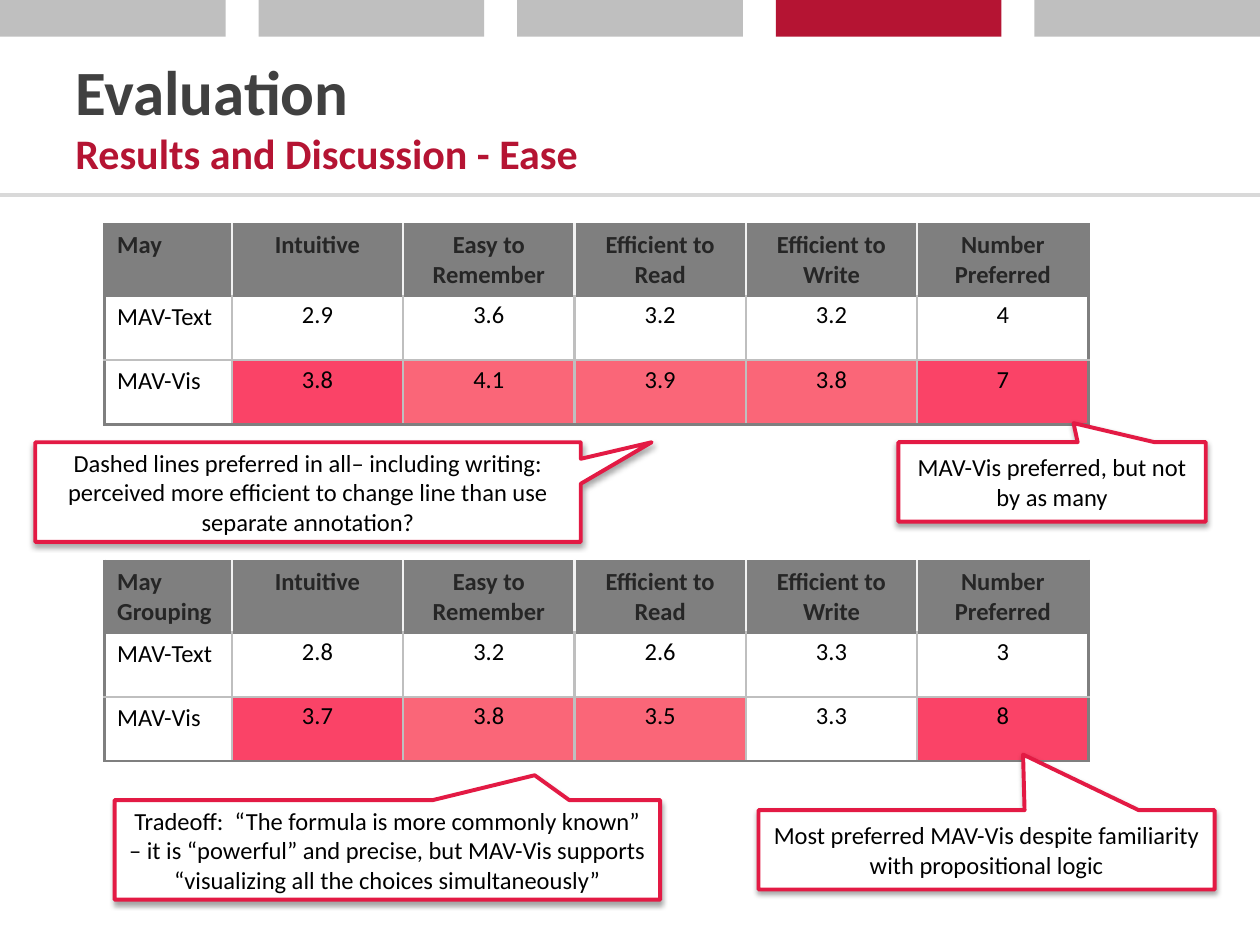
"""Build the evaluation slide with two rating tables and four callouts."""
from dataclasses import dataclass

from lxml.etree import SubElement
from pptx import Presentation
from pptx.dml.color import RGBColor
from pptx.enum.shapes import MSO_CONNECTOR, MSO_SHAPE
from pptx.enum.text import MSO_ANCHOR, PP_ALIGN
from pptx.oxml import parse_xml
from pptx.oxml.ns import nsdecls, qn
from pptx.slide import Slide
from pptx.table import _Cell
from pptx.text.text import _Run
from pptx.util import Inches, Pt

FONT = "Calibri"
BLACK, WHITE = "000000", "FFFFFF"
CRIMSON, CALLOUT_RED = "B51433", "E31A44"
DARK_GRAY, GRAY, SILVER, RULE_GRAY = "404040", "7F7F7F", "BFBFBF", "D9D9D9"
HEADER_TEXT, HEADER_LINE = "262626", "F2F2F2"
STRONG, MILD = "FA4367", "FA6678"
HEADINGS = ["Intuitive", "Easy to Remember", "Efficient to Read",
            "Efficient to Write", "Number Preferred"]
COLUMN_WIDTHS = [1.01] + [1.36] * len(HEADINGS)
ROW_HEIGHTS = [0.57, 0.51, 0.51]


@dataclass
class RatingTable:
    title: str
    top: float
    text_scores: list[str]
    vis_scores: list[str]
    vis_fills: list[str]


@dataclass
class Callout:
    left: float
    top: float
    width: float
    height: float
    pointer: tuple[float, float]
    text: str


TABLES = [
    RatingTable("May Grouping", 4.45, ["2.8", "3.2", "2.6", "3.3", "3"],
                ["3.7", "3.8", "3.5", "3.3", "8"], [STRONG, MILD, MILD, WHITE, STRONG]),
    RatingTable("May", 1.78, ["2.9", "3.6", "3.2", "3.2", "4"],
                ["3.8", "4.1", "3.9", "3.8", "7"], [STRONG, MILD, MILD, MILD, STRONG]),
]
CALLOUTS = [
    Callout(0.28, 3.51, 4.33, 0.79, (0.63, -0.5),
            "Dashed lines preferred in all– including writing: perceived more "
            "efficient to change line than use separate annotation?"),
    Callout(7.13, 3.51, 2.44, 0.63, (0.07, -0.74),
            "MAV-Vis preferred, but not by as many"),
    Callout(0.91, 6.35, 4.33, 0.79, (0.27, -0.75),
            "Tradeoff:  “The formula is more commonly known” – it is “powerful” and "
            "precise, but MAV-Vis supports “visualizing all the choices simultaneously”"),
    Callout(6.02, 6.43, 3.62, 0.63, (0.08, -1.2),
            "Most preferred MAV-Vis despite familiarity with propositional logic"),
]


def color(value: str) -> RGBColor:
    return RGBColor.from_string(value)


def format_run(run: _Run, size: float, value: str, bold: bool = False) -> None:
    run.font.name = FONT
    run.font.size = Pt(size)
    run.font.bold = bold
    run.font.color.rgb = color(value)


def draw_banner(slide: Slide) -> None:
    rule = slide.shapes.add_connector(
        MSO_CONNECTOR.STRAIGHT, Inches(0), Inches(1.55), Inches(10), Inches(1.55))
    rule.line.color.rgb = color(RULE_GRAY)
    rule.line.width = Pt(2.25)
    SubElement(rule._element.spPr, qn("a:effectLst"))
    count, width, active = 5, 1.79, 3
    step = (10 - width) / (count - 1)
    for index in range(count):
        tab = slide.shapes.add_shape(
            MSO_SHAPE.RECTANGLE, Inches(index * step), Inches(0), Inches(width), Inches(0.29))
        tab.shadow.inherit = False
        tab.fill.solid()
        tab.fill.fore_color.rgb = color(CRIMSON if index == active else SILVER)
        tab.line.fill.background()


def draw_title(slide: Slide) -> None:
    box = slide.shapes.add_textbox(Inches(0.5), Inches(0.29), Inches(9), Inches(1.25))
    text_frame = box.text_frame
    text_frame.word_wrap = True
    text_frame.vertical_anchor = MSO_ANCHOR.MIDDLE
    paragraph = text_frame.paragraphs[0]
    paragraph.text = "Evaluation\vResults and Discussion - Ease"
    heading, subheading = paragraph.runs
    format_run(heading, 36, DARK_GRAY, True)
    format_run(subheading, 24, CRIMSON, True)


def set_borders(cell: _Cell, left: str, right: str, top: str, bottom: str) -> None:
    properties = cell._tc.get_or_add_tcPr()
    sides = zip("LRTB", (left, right, top, bottom))
    for index, (side, value) in enumerate(sides):
        properties.insert(index, parse_xml(
            f'<a:ln{side} {nsdecls("a")} w="{Pt(1.5)}"><a:solidFill>'
            f'<a:srgbClr val="{value}"/></a:solidFill></a:ln{side}>'))


def draw_table(slide: Slide, rating: RatingTable) -> None:
    rows = [[rating.title, *HEADINGS], ["MAV-Text", *rating.text_scores],
            ["MAV-Vis", *rating.vis_scores]]
    last_column, last_row = len(HEADINGS), len(rows) - 1
    fills = [[GRAY] * len(COLUMN_WIDTHS), [WHITE] * len(COLUMN_WIDTHS),
             [WHITE, *rating.vis_fills]]
    table = slide.shapes.add_table(
        len(rows), len(COLUMN_WIDTHS), Inches(0.83), Inches(rating.top),
        Inches(sum(COLUMN_WIDTHS)), Inches(sum(ROW_HEIGHTS))).table
    table.horz_banding = False
    for column, width in zip(table.columns, COLUMN_WIDTHS):
        column.width = Inches(width)
    for row, height in zip(table.rows, ROW_HEIGHTS):
        row.height = Inches(height)
    for row_index, texts in enumerate(rows):
        header = row_index == 0
        inner = HEADER_LINE if header else SILVER
        for column_index, text in enumerate(texts):
            cell = table.cell(row_index, column_index)
            cell.fill.solid()
            cell.fill.fore_color.rgb = color(fills[row_index][column_index])
            set_borders(cell,
                        left=GRAY if column_index == 0 else inner,
                        right=GRAY if column_index == last_column else inner,
                        top=GRAY if row_index < 2 else SILVER,
                        bottom=GRAY if row_index in (0, last_row) else SILVER)
            paragraph = cell.text_frame.paragraphs[0]
            paragraph.text = text
            format_run(paragraph.runs[0], 14, HEADER_TEXT if header else BLACK, header)
            if column_index > 0:
                paragraph.alignment = PP_ALIGN.CENTER
                if not header:
                    paragraph.line_spacing = 1.15
                    cell.margin_left = cell.margin_right = Inches(0.07)
                    cell.margin_top = cell.margin_bottom = Inches(0)


def draw_callout(slide: Slide, callout: Callout) -> None:
    shape = slide.shapes.add_shape(
        MSO_SHAPE.RECTANGULAR_CALLOUT, Inches(callout.left), Inches(callout.top),
        Inches(callout.width), Inches(callout.height))
    for index, value in enumerate(callout.pointer):
        shape.adjustments[index] = value
    shape.fill.solid()
    shape.fill.fore_color.rgb = color(WHITE)
    shape.line.color.rgb = color(CALLOUT_RED)
    shape.line.width = Pt(2.25)
    shape.shadow.inherit = False
    shape._element.spPr.find(qn("a:effectLst")).append(parse_xml(
        f'<a:outerShdw {nsdecls("a")} blurRad="{Pt(3.1)}" dist="{Pt(1.8)}" dir="5400000" '
        f'rotWithShape="0"><a:srgbClr val="{BLACK}"><a:alpha val="35000"/></a:srgbClr>'
        '</a:outerShdw>'))
    text_frame = shape.text_frame
    text_frame.word_wrap = True
    text_frame.vertical_anchor = MSO_ANCHOR.MIDDLE
    paragraph = text_frame.paragraphs[0]
    paragraph.text = callout.text
    paragraph.alignment = PP_ALIGN.CENTER
    format_run(paragraph.runs[0], 14, BLACK)


def main() -> None:
    presentation = Presentation()
    presentation.slide_width = Inches(10)
    presentation.slide_height = Inches(7.5)
    slide = presentation.slides.add_slide(presentation.slide_layouts[6])
    draw_banner(slide)
    draw_title(slide)
    for rating in TABLES:
        draw_table(slide, rating)
    for callout in CALLOUTS:
        draw_callout(slide, callout)
    presentation.save("out.pptx")


if __name__ == "__main__":
    main()
